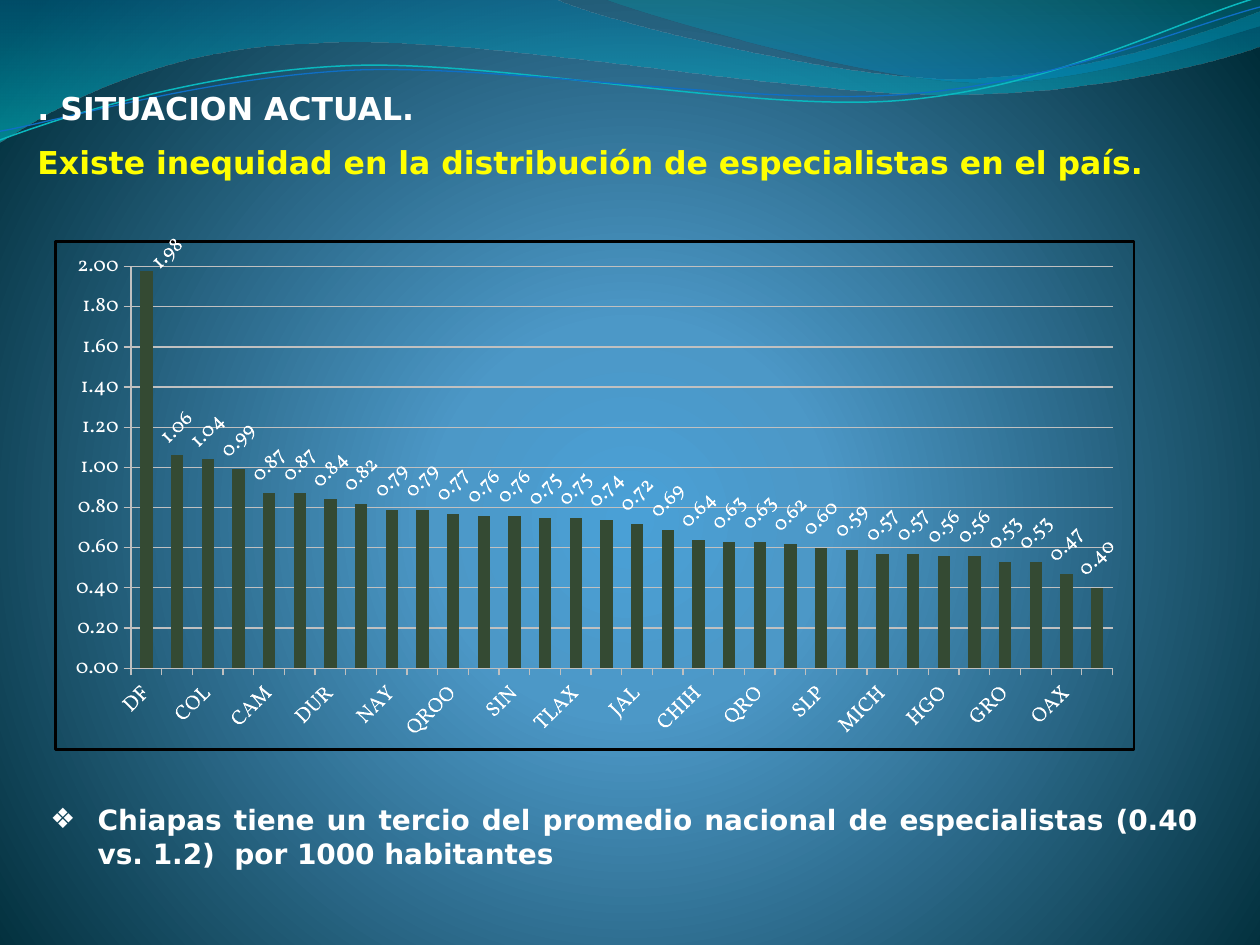
from math import cos, radians, sin

from lxml.etree import SubElement
from pptx import Presentation
from pptx.chart.data import CategoryChartData
from pptx.dml.color import RGBColor
from pptx.enum.chart import XL_CHART_TYPE as ChartType, XL_LABEL_POSITION as LabelPosition
from pptx.enum.chart import XL_TICK_MARK as TickMark
from pptx.enum.text import MSO_ANCHOR as Anchor, MSO_AUTO_SIZE as AutoSize, PP_ALIGN as Align
from pptx.oxml import parse_xml
from pptx.oxml.ns import nsdecls, qn
from pptx.util import Pt

TEXT_FONT, CHART_FONT = "DejaVu Sans", "Vollkorn"
WHITE, YELLOW, GRID, BAR = "FFFFFF", "FFFF00", "C0C0C0", "344A33"
RADIAL = '<a:path {} path="circle"><a:fillToRect l="10000" t="110000" r="10000" b="100000"/></a:path>'
VERTICAL = '<a:lin {} ang="5400000" scaled="1"/>'
SLANT = "-2700000"
STRAND_TURN = 357.3

STATES = ("DF BCS COL AGS CAM COA DUR TAM NAY YUC QROO MOR SIN TAB TLAX BC JAL SON CHIH ZAC "
          "QRO NL SLP VER MICH GTO HGO MEX GRO PUE OAX CHIS").split()
RATES = [1.98, 1.06, 1.04, 0.99, 0.87, 0.87, 0.84, 0.82, 0.79, 0.79, 0.77, 0.76, 0.76, 0.75, 0.75, 0.74,
         0.72, 0.69, 0.64, 0.63, 0.63, 0.62, 0.6, 0.59, 0.57, 0.57, 0.56, 0.56, 0.53, 0.53, 0.47, 0.4]

BROAD_WAVE = [(0, 0), (317, -0.7), (343, 12, 478, 45, 546, 45), (614, 45, 690, 19, 720, 6.5), (721, 26),
              (708, 32, 626, 55, 537, 54), (448, 54, 275, 20, 185, 24.5), (93, 26, 33, 60, -0.7, 81.4), (0, 0)]
RIGHT_WAVE = [(345, -0.7), (367, 8, 491, 45, 554, 47), (616, 50, 692, 23, 720, 15), (720, 0), (345, -0.7)]
TEAL_STRAND = [(0, 80), (35, 67, 114, 41, 199, 37.5), (284, 34, 427, 64, 513, 57.5),
               (600, 51, 675, 11, 719, -1.5)]
BLUE_STRAND = [(0, 75), (34, 69, 118, 44, 204, 40), (290, 37, 430, 60.5, 516, 54), (602, 48, 678, 15, 720, 4)]


def color(hex_code):
    """Return the colour for a hex string."""
    return RGBColor.from_string(hex_code)


def set_gradient(fill, holder, stops, direction):
    """Give a fill the (position, colour, opacity) stops in percent."""
    fill.gradient()
    gradient = holder.find(".//" + qn("a:gradFill"))
    gradient.clear()
    stop_list = SubElement(gradient, qn("a:gsLst"))
    for position, hex_code, opacity in stops:
        stop = SubElement(stop_list, qn("a:gs"), pos=str(position * 1000))
        shade = SubElement(stop, qn("a:srgbClr"), val=hex_code)
        if opacity < 100:
            SubElement(shade, qn("a:alpha"), val=str(opacity * 1000))
    gradient.append(parse_xml(direction.format(nsdecls("a"))))


def turn(point, pivot, degrees):
    """Turn a point around a pivot."""
    dx, dy = point[0] - pivot[0], point[1] - pivot[1]
    c, s = cos(radians(degrees)), sin(radians(degrees))
    return pivot[0] + dx * c - dy * s, pivot[1] + dx * s + dy * c


def add_curve(slide, segments, closed, pivot=(0, 0), rotation=0):
    """Add a freeform of lines (two numbers) and cubic curves (six)."""
    points = [turn(segment[i:i + 2], pivot, -rotation) for segment in segments for i in range(0, len(segment), 2)]
    points = [(Pt(x), Pt(y)) for x, y in points]
    builder = slide.shapes.build_freeform(*points[0])
    builder.add_line_segments(points[1:], close=closed)
    curve = builder.convert_to_shape()
    steps = iter(curve._element.findall(".//" + qn("a:lnTo")))
    for segment in segments[1:]:
        step = next(steps)
        if len(segment) == 6:
            step.tag = qn("a:cubicBezTo")
            for extra in (next(steps), next(steps)):
                step.append(extra[0])
                extra.getparent().remove(extra)
    curve.rotation = rotation
    curve.shadow.inherit = False
    return curve


def add_wave(slide, segments, stops):
    """Add a translucent wave."""
    wave = add_curve(slide, segments, True)
    set_gradient(wave.fill, wave._element, stops, VERTICAL)
    wave.line.fill.background()


def add_strand(slide, segments, pivot, hex_code, width):
    """Add a thin curved line."""
    strand = add_curve(slide, segments, False, pivot, STRAND_TURN)
    strand.fill.background()
    style_line(strand.line, hex_code, width)


def place(slide, placeholder, left, top, width, height):
    """Move a placeholder to the front and return its text frame."""
    slide.shapes._spTree.append(placeholder._element)
    placeholder.left, placeholder.top = Pt(left), Pt(top)
    placeholder.width, placeholder.height = Pt(width), Pt(height)
    frame = placeholder.text_frame
    frame.word_wrap = True
    frame.auto_size = AutoSize.NONE
    frame.vertical_anchor = Anchor.TOP
    return frame


def write(paragraph, text, size, hex_code, before=0):
    """Write a bold justified paragraph."""
    paragraph.alignment = Align.JUSTIFY
    paragraph.space_before = Pt(before)
    run = paragraph.add_run()
    run.text = text
    style_font(run.font, size, hex_code, TEXT_FONT)
    run.font.bold = True


def style_font(font, size, hex_code, name):
    """Set size, colour and typeface."""
    font.size, font.name = Pt(size), name
    font.color.rgb = color(hex_code)


def set_bullet(paragraph, character, indent):
    """Give a paragraph a hanging bullet."""
    properties = paragraph._p.get_or_add_pPr()
    properties.set("marL", str(Pt(indent)))
    properties.set("indent", str(-Pt(indent)))
    SubElement(properties, qn("a:buChar"), char=character)


def slant_labels(labels, element):
    """Style labels and tilt them upwards."""
    style_font(labels.font, 12, WHITE, CHART_FONT)
    element.find(qn("c:txPr")).find(qn("a:bodyPr")).set("rot", SLANT)


def style_line(line, hex_code, width=0.75):
    """Set colour and width of a line."""
    line.color.rgb = color(hex_code)
    line.width = Pt(width)


def manual_layout(**settings):
    """Return a chart layout with the given settings."""
    layout = parse_xml(f'<c:layout {nsdecls("c")}><c:manualLayout/></c:layout>')
    for tag, value in settings.items():
        SubElement(layout[0], qn("c:" + tag), val=str(value))
    return layout


def frame_plot(chart):
    """Fix the plot area and draw the chart border."""
    area = chart._chartSpace.chart.plotArea
    for old in area.findall(qn("c:layout")):
        area.remove(old)
    area.insert(0, manual_layout(layoutTarget="inner", xMode="edge", yMode="edge", x=0.07, y=0.05, w=0.91, h=0.79))
    chart._chartSpace.chart.addnext(parse_xml(
        f'<c:spPr {nsdecls("c", "a")}><a:noFill/><a:ln w="{Pt(1.5)}"><a:solidFill>'
        '<a:srgbClr val="000000"/></a:solidFill></a:ln></c:spPr>'))


def label_rates(series):
    """Show the slanted rates, the first one moved aside."""
    labels = series.data_labels
    labels.show_value = True
    labels.number_format, labels.number_format_is_linked = "0.00", False
    labels.position = LabelPosition.OUTSIDE_END
    slant_labels(labels, labels._element)
    capital = series.points[0].data_label
    capital.position = LabelPosition.OUTSIDE_END
    element = labels._element.find(qn("c:dLbl"))
    slant_labels(capital, element)
    element.find(qn("c:idx")).addnext(manual_layout(x=0.02, y=0.02))


def add_rates_chart(slide):
    """Add the column chart of specialists by state."""
    data = CategoryChartData(number_format="0.00")
    data.categories = STATES
    data.add_series("Series 1", RATES)
    chart = slide.shapes.add_chart(ChartType.COLUMN_CLUSTERED, Pt(31), Pt(132.5), Pt(617.8), Pt(296.6), data).chart
    chart.has_legend = chart.has_title = False
    style_font(chart.font, 18, WHITE, CHART_FONT)
    frame_plot(chart)
    rates, states = chart.value_axis, chart.category_axis
    rates.minimum_scale, rates.maximum_scale = 0, 2
    rates.tick_labels.number_format, rates.tick_labels.number_format_is_linked = "0.00", False
    style_font(rates.tick_labels.font, 12, WHITE, CHART_FONT)
    style_line(rates.major_gridlines.format.line, GRID)
    for axis in (rates, states):
        axis.major_tick_mark = TickMark.OUTSIDE
        style_line(axis.format.line, GRID)
    slant_labels(states.tick_labels, states._element)
    skip = parse_xml(f'<c:tickLblSkip {nsdecls("c")} val="2"/>')
    states._element.find(qn("c:lblOffset")).addnext(skip)
    plot = chart.plots[0]
    plot.gap_width, plot.vary_by_categories = 150, False
    series = plot.series[0]
    series.format.fill.solid()
    series.format.fill.fore_color.rgb = color(BAR)
    label_rates(series)


def main():
    """Build and save the slide."""
    deck = Presentation()
    deck.slide_width, deck.slide_height = Pt(720), Pt(540)
    slide = deck.slides.add_slide(deck.slide_layouts[1])
    set_gradient(slide.background.fill, slide._element,
                 [(0, "4AA0D6", 100), (25, "4C98C7", 100), (100, "002C38", 100)], RADIAL)
    add_wave(slide, BROAD_WAVE, [(0, "0074A1", 45), (100, "00C6CF", 55)])
    add_wave(slide, RIGHT_WAVE, [(0, "00A1A9", 30), (80, "008BBF", 45)])
    add_strand(slide, TEAL_STRAND, (359.3, 41.4), "0AB8BF", 0.85)
    add_strand(slide, BLUE_STRAND, (359.6, 42.5), "0F6FC6", 0.75)
    heading = place(slide, slide.shapes.title, 14.2, 47.5, 692, 60.5)
    write(heading.paragraphs[0], ". SITUACION ACTUAL.", 18, WHITE)
    write(heading.add_paragraph(), "Existe inequidad en la distribución de especialistas en el país.", 18, YELLOW, 9)
    finding = place(slide, slide.placeholders[1], 21.6, 455, 670.3, 46).paragraphs[0]
    set_bullet(finding, "❖", 27)
    write(finding, "Chiapas tiene un tercio del promedio nacional de especialistas (0.40 vs. 1.2)  por 1000 habitantes",
          16, WHITE)
    add_rates_chart(slide)
    deck.save("out.pptx")


if __name__ == "__main__":
    main()
